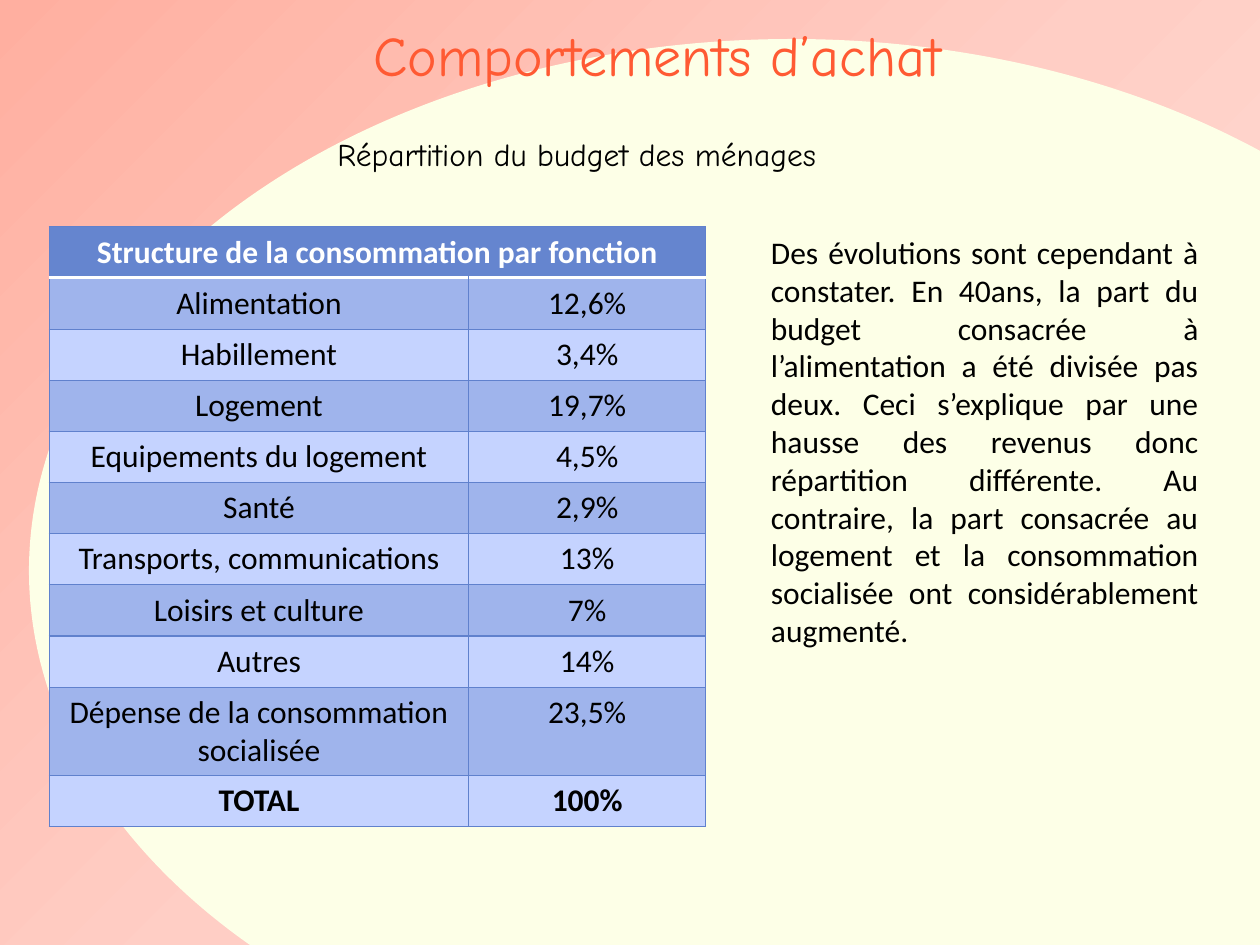
from copy import deepcopy

from lxml import etree
from pptx import Presentation
from pptx.dml.color import RGBColor
from pptx.enum.shapes import MSO_SHAPE
from pptx.enum.text import MSO_ANCHOR, MSO_AUTO_SIZE, PP_ALIGN
from pptx.oxml.ns import qn
from pptx.util import Inches, Pt

RECTANGLE, OVAL = MSO_SHAPE.RECTANGLE, MSO_SHAPE.OVAL
LEFT, CENTER, JUSTIFY = PP_ALIGN.LEFT, PP_ALIGN.CENTER, PP_ALIGN.JUSTIFY
TOP, MIDDLE = MSO_ANCHOR.TOP, MSO_ANCHOR.MIDDLE
NO_AUTOFIT = MSO_AUTO_SIZE.NONE

BLACK = RGBColor(0x00, 0x00, 0x00)
WHITE = RGBColor(0xFF, 0xFF, 0xFF)
ORANGE = RGBColor(0xFF, 0x5A, 0x33)
CREAM = RGBColor(0xFD, 0xFF, 0xE7)
PINKS = [RGBColor(0xFF, 0xAF, 0xA0), RGBColor(0xFF, 0xCE, 0xC5),
         RGBColor(0xFF, 0xE7, 0xE3)]
HEADER_BLUE = RGBColor(0x65, 0x85, 0xCF)
BORDER_BLUE = RGBColor(0x60, 0x81, 0xCD)
BAND_DARK = RGBColor(0x9F, 0xB4, 0xEC)
BAND_LIGHT = RGBColor(0xC5, 0xD3, 0xFF)

TITLE_ONLY = 5
HEADING_FONT, BODY_FONT = "Comic Neue", "Calibri"

TABLE_TITLE = "Structure de la consommation par fonction"
BUDGET = [
    ("Alimentation", "12,6%"),
    ("Habillement", "3,4%"),
    ("Logement", "19,7%"),
    ("Equipements du logement", "4,5%"),
    ("Santé", "2,9%"),
    ("Transports, communications", "13%"),
    ("Loisirs et culture", "7%"),
    ("Autres", "14%"),
    ("Dépense de la consommation socialisée", "23,5%"),
    ("TOTAL", "100%"),
]
TWO_LINE_ROW = 9
COMMENT = (
    "Des évolutions sont cependant à constater. En 40ans, la part du budget "
    "consacrée à l’alimentation a été divisée pas deux. Ceci s’explique par "
    "une hausse des revenus donc répartition différente. Au contraire, la "
    "part consacrée au logement et la consommation socialisée ont "
    "considérablement augmenté."
)


def write_text(frame, text, size=18, font=BODY_FONT, color=BLACK,
               bold=False, align=LEFT):
    para = frame.paragraphs[0]
    para.alignment = align
    span = para.add_run()
    span.text = text
    span.font.size = Pt(size)
    span.font.name = font
    span.font.color.rgb = color
    span.font.bold = bold


def add_border(cell, side, color=BORDER_BLUE, width=0.75):
    properties = cell._tc.get_or_add_tcPr()
    line = etree.SubElement(properties, qn(f"a:ln{side}"), w=str(Pt(width)))
    fill = etree.SubElement(line, qn("a:solidFill"))
    etree.SubElement(fill, qn("a:srgbClr"), val=str(color))


class SlideBuilder:
    """Holds the current slide and draws its kinds of element."""

    def __init__(self, slide):
        self.slide = slide
        self.shapes = slide.shapes

    def shape(self, kind, left, top, width, height):
        shape = self.shapes.add_shape(
            kind, Inches(left), Inches(top), Inches(width), Inches(height))
        shape.shadow.inherit = False
        shape.line.fill.background()
        return shape

    def gradient(self, shape, colors):
        shape.fill.gradient()
        shape.fill.gradient_angle = 315
        stop_list = shape._element.spPr.find(qn("a:gradFill")).find(qn("a:gsLst"))
        stop_list.append(deepcopy(stop_list[-1]))
        last = len(colors) - 1
        for index, stop in enumerate(shape.fill.gradient_stops):
            stop.color.rgb = colors[index]
            stop.position = index / last

    def title(self, text, left, top, width, height):
        title = self.shapes.title
        title.left, title.top = Inches(left), Inches(top)
        title.width, title.height = Inches(width), Inches(height)
        title.text_frame.auto_size = NO_AUTOFIT
        title.text_frame.vertical_anchor = MIDDLE
        write_text(title.text_frame, text, size=32, font=HEADING_FONT,
                   color=ORANGE, align=CENTER)
        # Bring the title in front of the backdrop
        self.shapes._spTree.append(title._element)

    def text(self, text, left, top, width, height, **style):
        box = self.shapes.add_textbox(
            Inches(left), Inches(top), Inches(width), Inches(height))
        box.text_frame.word_wrap = True
        write_text(box.text_frame, text, **style)

    def cell(self, cell, text, fill, header=False, below_header=False,
             bold=False):
        white_side = "B" if header else "T" if below_header else None
        for side in "LRTB":
            if side == white_side:
                add_border(cell, side, WHITE, 2)
            else:
                add_border(cell, side)
        cell.fill.solid()
        cell.fill.fore_color.rgb = fill
        cell.vertical_anchor = TOP
        if text:
            write_text(cell.text_frame, text, align=CENTER, bold=bold,
                       color=WHITE if header else BLACK)

    def table(self, heading, rows, left, top, widths, height, tall_row,
              tall_height):
        table = self.shapes.add_table(
            len(rows) + 1, len(widths), Inches(left), Inches(top),
            Inches(sum(widths)), Inches(height)).table
        for column, width in zip(table.columns, widths):
            column.width = Inches(width)
        row_height = (height - tall_height) / len(rows)
        for index, row in enumerate(table.rows):
            row.height = Inches(tall_height if index == tall_row else row_height)

        # Header across all columns
        table.cell(0, 0).merge(table.cell(0, len(widths) - 1))
        for column, text in enumerate((heading, "")):
            self.cell(table.cell(0, column), text, HEADER_BLUE, header=True,
                      bold=True)

        # Banded rows, with a bold total
        for index, values in enumerate(rows, start=1):
            fill = BAND_DARK if index % 2 else BAND_LIGHT
            for column, text in enumerate(values):
                self.cell(table.cell(index, column), text, fill,
                          below_header=index == 1, bold=index == len(rows))


def main():
    deck = Presentation()
    deck.slide_width, deck.slide_height = Inches(10), Inches(7.5)
    page = SlideBuilder(deck.slides.add_slide(deck.slide_layouts[TITLE_ONLY]))

    # Backdrop
    backdrop = page.shape(RECTANGLE, 0, 0, 10.16, 7.73)
    page.gradient(backdrop, PINKS)
    ellipse = page.shape(OVAL, 0.23, 0.31, 12.11, 8.44)
    ellipse.fill.solid()
    ellipse.fill.fore_color.rgb = CREAM

    # Headings
    page.title("Comportements d’achat", 1.72, 0.08, 7, 0.7)
    page.text("Répartition du budget des ménages", 2.58, 1.02, 5.47, 0.4,
              font=HEADING_FONT)

    # Budget table and comment
    page.table(TABLE_TITLE, BUDGET, 0.39, 1.8, (3.33, 1.88), 4.76,
               TWO_LINE_ROW, 0.7)
    page.text(COMMENT, 6.02, 1.8, 3.59, 3.43, align=JUSTIFY)

    deck.save("out.pptx")


if __name__ == "__main__":
    main()
